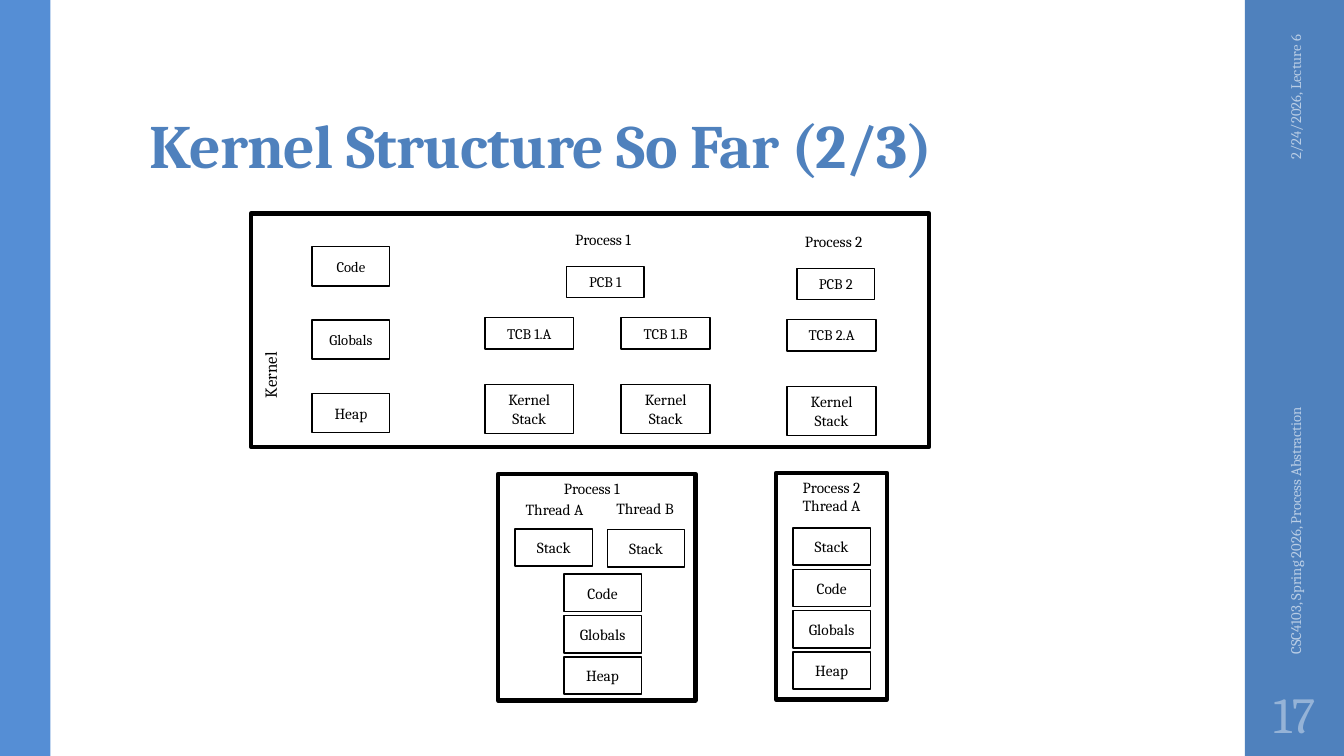
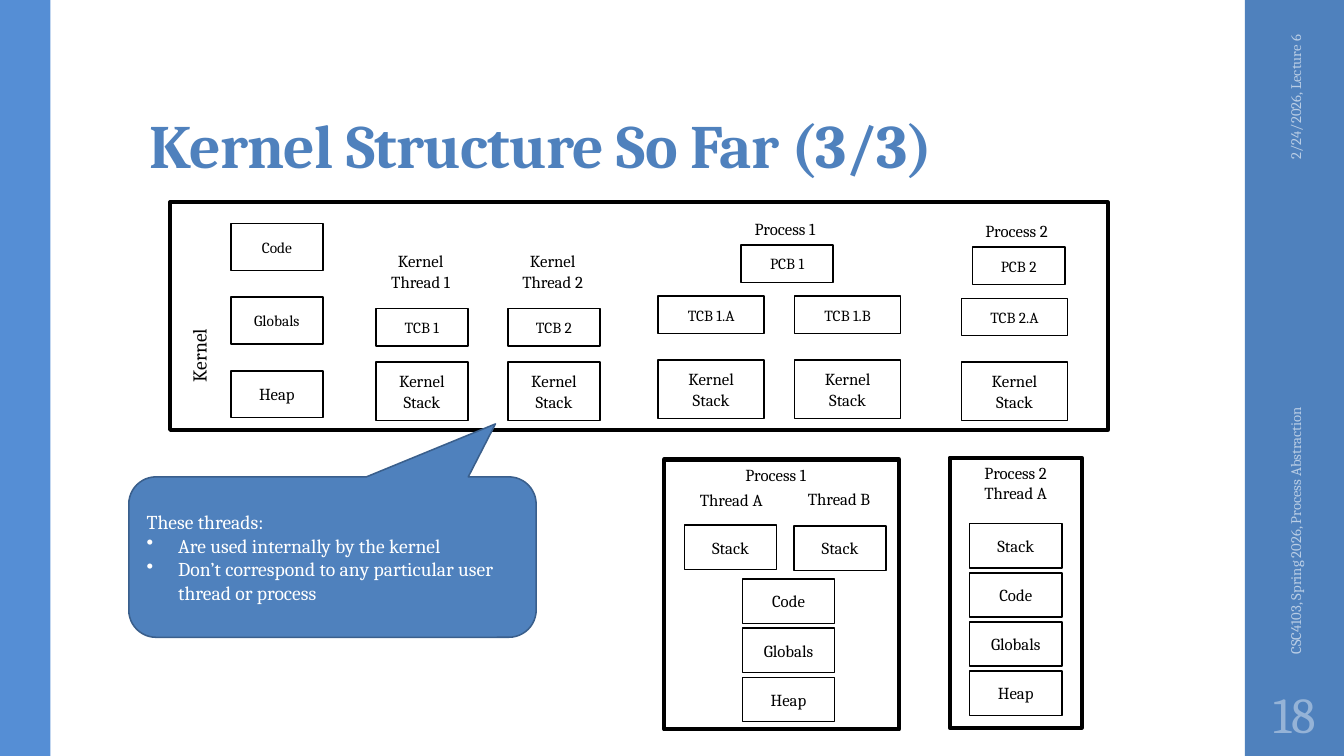
"""Build two slides showing kernel structure with processes and threads."""
import dataclasses

import lxml.etree
import pptx
import pptx.dml.color
import pptx.enum.shapes
import pptx.enum.text
import pptx.oxml.ns
import pptx.util

Pt = pptx.util.Pt
SHAPES = pptx.enum.shapes.MSO_SHAPE
ALIGN = pptx.enum.text.PP_ALIGN
ANCHOR = pptx.enum.text.MSO_ANCHOR
COLORS = {
    "blue": "4F81BD",
    "left_band": "558ED5",
    "footer": "B9CDE5",
    "number": "95B3D7",
    "callout_line": "3A5F8C",
    "ink": "000000",
    "white": "FFFFFF",
}


def rgb(name):
    return pptx.dml.color.RGBColor.from_string(COLORS[name])


def write_text(shape, *texts, size, color="ink", align=ALIGN.CENTER, anchor=ANCHOR.MIDDLE,
               bold=False, wrap=True, bullets_from=None, line_spacing=None, tracking=None):
    frame = shape.text_frame
    frame.word_wrap = wrap
    frame.vertical_anchor = anchor
    for index, text in enumerate(texts):
        paragraph = frame.add_paragraph() if index else frame.paragraphs[0]
        paragraph.text = text
        paragraph.alignment = align
        if line_spacing:
            paragraph.line_spacing = line_spacing
        if bullets_from is not None and index >= bullets_from:
            properties = paragraph._p.get_or_add_pPr()
            properties.set("marL", str(Pt(22.5)))
            properties.set("indent", str(-Pt(22.5)))
            bullet = lxml.etree.SubElement(properties, pptx.oxml.ns.qn("a:buChar"))
            bullet.set("char", "•")
        for run in paragraph.runs:
            run.font.name = Deck.font
            run.font.size = Pt(size)
            run.font.bold = bold
            run.font.color.rgb = rgb(color)
            if tracking:
                run._r.get_or_add_rPr().set("spc", str(tracking))


@dataclasses.dataclass
class Kernel:
    frame: tuple
    name_center: tuple
    segments: tuple
    segment_step: float
    processes: tuple
    stack_drop: float
    label_rise: float
    threads: tuple = ()


class Deck:
    font = "Cambria"
    box_width = 55.3
    thread_width = 63.5
    control_height = 22.4
    stack_height = 35.2
    segment_height = 28
    user_height = 26.6
    thread_step = 97.5

    def __init__(self):
        self.presentation = pptx.Presentation()
        self.presentation.slide_width = Pt(960)
        self.presentation.slide_height = Pt(540)

    def start_slide(self, title, number, scale, small, normal, large):
        self.slide = self.presentation.slides.add_slide(self.presentation.slide_layouts[6])
        self.scale, self.small, self.normal, self.large = scale, small, normal, large
        self.shape(889.2, 0, 70.8, 540, fill="blue")
        self.shape(0, 0, 36, 540, fill="left_band")
        heading = self.text_box(99.4, 23, 763.2, 110.2)
        heading.text_frame.margin_top = Pt(2)
        write_text(heading, title, size=44, color="blue", bold=True, align=ALIGN.LEFT,
                   anchor=ANCHOR.BOTTOM, line_spacing=0.9, tracking=-50)
        self.sideways("2/24/2026, Lecture 6", 925.2, 92.9, 149.8, 10.5, "footer", ALIGN.RIGHT)
        self.sideways("CSC4103, Spring 2026, Process Abstraction", 925.2, 333.4, 282.2, 10.5,
                      "footer", ALIGN.LEFT)
        write_text(self.text_box(889.2, 486, 70.8, 46.8), number, size=36, color="number")

    def text_box(self, left, top, width, height):
        return self.slide.shapes.add_textbox(Pt(left), Pt(top), Pt(width), Pt(height))

    def shape(self, left, top, width, height, kind=SHAPES.RECTANGLE, fill=None, line=None,
              weight=1.1):
        shape = self.slide.shapes.add_shape(kind, Pt(left), Pt(top), Pt(width), Pt(height))
        shape.shadow.inherit = False
        if fill:
            shape.fill.solid()
            shape.fill.fore_color.rgb = rgb(fill)
        else:
            shape.fill.background()
        if line:
            shape.line.color.rgb = rgb(line)
            shape.line.width = Pt(weight)
        else:
            shape.line.fill.background()
        return shape

    def frame(self, left, top, width, height):
        self.shape(left, top, width, height, line="ink", weight=3)

    def box(self, text, left, top, width, height, size):
        shape = self.shape(left, top, width * self.scale, height * self.scale, line="ink")
        write_text(shape, text, size=size)

    def label(self, text, center, top):
        write_text(self.text_box(center - 36, top, 72, 20.9), text, size=self.normal,
                   anchor=ANCHOR.TOP, wrap=False)

    def sideways(self, text, center_x, center_y, length, size, color="ink", align=ALIGN.CENTER):
        shape = self.text_box(center_x - length / 2, center_y - 14.4, length, 28.8)
        shape.rotation = 270
        write_text(shape, text, size=size, color=color, align=align)

    def callout(self, left, top, width, height, adjustments, *texts):
        shape = self.shape(left, top, width, height, SHAPES.ROUNDED_RECTANGULAR_CALLOUT,
                           "blue", "callout_line")
        for index, value in enumerate(adjustments):
            shape.adjustments[index] = value
        write_text(shape, *texts, size=14, color="white", align=ALIGN.LEFT, bullets_from=1)

    def kernel_process(self, kernel, number, left, top, letters, shift):
        width = self.thread_width * self.scale
        center = left + (width + (len(letters) - 1) * self.thread_step) / 2 + shift
        self.label(f"Process {number}", center - 1.5, top - kernel.label_rise)
        self.box(f"PCB {number}", center - self.box_width * self.scale / 2, top - 36.5,
                 self.box_width, self.control_height, self.small)
        for index, letter in enumerate(letters):
            self.thread(f"TCB {number}.{letter}", left + index * self.thread_step, top,
                        self.thread_width, kernel.stack_drop)

    def thread(self, text, left, top, width, stack_drop):
        self.box(text, left, top, width, self.control_height, self.small)
        self.box("Kernel\nStack", left, top + stack_drop, width, self.stack_height, self.normal)

    def kernel(self, kernel):
        self.frame(*kernel.frame)
        self.sideways("Kernel", *kernel.name_center, 86, self.large)
        left, top = kernel.segments
        sizes = {"Code": self.small, "Globals": self.small, "Heap": self.normal}
        for index, (text, size) in enumerate(sizes.items()):
            self.box(text, left, top + index * kernel.segment_step, self.box_width,
                     self.segment_height, size)
        for number, (left, top) in enumerate(kernel.threads, 1):
            self.label(f"Kernel\nThread {number}", left + 32, top - 44.6)
            self.thread(f"TCB {number}", left, top, self.box_width, 38.2)
        for number, process in enumerate(kernel.processes, 1):
            self.kernel_process(kernel, number, *process)

    def user_frame(self, left, top, width, labels, boxes):
        scale = self.scale
        self.frame(left, top, width * scale, 162 * scale)
        for text, center, offset in labels:
            self.label(text, left + center * scale, top + offset * scale)
        for text, x, y in boxes:
            self.box(text, left + x * scale, top + y * scale, self.box_width,
                     self.user_height, self.normal)

    def user_processes(self, first, second):
        def column(texts, x, y):
            return [(text, x, y + index * 29.5) for index, text in enumerate(texts)]

        shared = ["Code", "Globals", "Heap"]
        self.user_frame(*first, 141,
                        [("Process 1", 67, 0), ("Thread A", 40.3, 15.3), ("Thread B", 105, 14.3)],
                        [("Stack", 12.2, 39.5), ("Stack", 78, 40)] + column(shared, 47, 71.8))
        self.user_frame(*second, 79.2, [("Process 2\nThread A", 39.6, 0)],
                        column(["Stack"] + shared, 12, 39.5))


def main():
    deck = Deck()
    deck.start_slide("Kernel Structure So Far (2/3)", "17", 1, 10.5, 11, 12)
    deck.kernel(Kernel(
        frame=(179.3, 152.6, 484.6, 166.5), name_center=(193, 268),
        segments=(223, 176.2), segment_step=52.4,
        processes=((346.3, 226.8, "AB", 5.5), (562.3, 228.2, "A", 3)),
        stack_drop=47.8, label_rise=66))
    deck.user_processes((355.8, 338.4), (554.4, 337.7))

    deck.start_slide("Kernel Structure So Far (3/3)", "18", 1.19, 11, 12, 14)
    deck.kernel(Kernel(
        frame=(121.6, 144.5, 669.7, 162.5), name_center=(142, 254),
        segments=(164.9, 159.8), segment_step=52.5,
        processes=((470.2, 211.6, "AB", 5.5), (686.9, 213.1, "A", 3)),
        stack_drop=45.5, label_rise=59,
        threads=((268.5, 220.4), (362.8, 220.4))))
    deck.user_processes((474.4, 328.2), (678.4, 327))
    deck.callout(92, 340.6, 291, 114.6, (0.4, -0.83, 0.17), "These threads:",
                 "Are used internally by the kernel",
                 "Don’t correspond to any particular user thread or process")
    deck.presentation.save("out.pptx")


if __name__ == "__main__":
    main()
